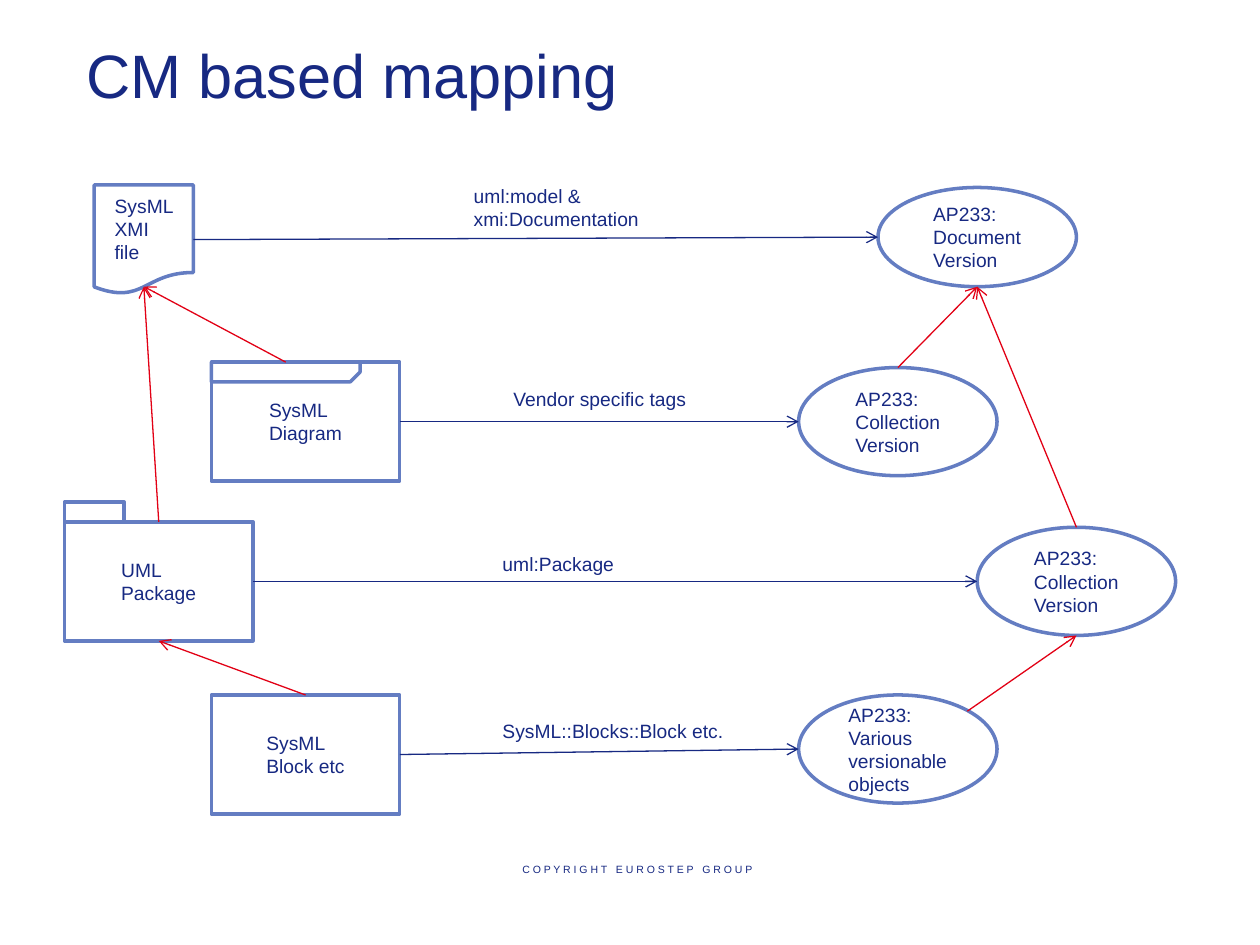
from dataclasses import dataclass

from lxml.etree import SubElement
from pptx import Presentation
from pptx.dml.color import RGBColor
from pptx.enum.shapes import MSO_CONNECTOR, MSO_SHAPE
from pptx.enum.text import MSO_ANCHOR
from pptx.oxml.ns import qn
from pptx.util import Cm, Pt


@dataclass(frozen=True)
class Theme:
    font: str = "Arial"
    ink: RGBColor = RGBColor(0x17, 0x29, 0x82)
    outline: RGBColor = RGBColor(0x64, 0x7D, 0xC2)
    containment: RGBColor = RGBColor(0xE2, 0x00, 0x15)
    paper: RGBColor = RGBColor(0xFF, 0xFF, 0xFF)
    title_size: float = 35
    body_size: float = 11
    footer_size: float = 6
    outline_width: float = 2
    arrow_width: float = 0.75


THEME = Theme()

TITLE = ("CM based mapping", (1.49, 0.46, 22.43, 2.06))
FOOTER = (" ".join("COPYRIGHT EUROSTEP GROUP"), (10.28, 17.27, 5.6, 0.51))

BOX = (3.8, 2.4)
OVAL = (4.0, 2.18)
TAB_HEIGHT = 0.4

# name: (preset, left, top, (width, height), paragraphs)
NODES = {
    "file": (MSO_SHAPE.FLOWCHART_DOCUMENT, 1.9, 3.73, (2.0, 2.2), ["SysML XMI", "file"]),
    "diagram": (MSO_SHAPE.RECTANGLE, 4.26, 7.3, BOX, ["SysML", "Diagram"]),
    "package": (MSO_SHAPE.RECTANGLE, 1.3, 10.52, BOX, ["UML", "Package"]),
    "block": (MSO_SHAPE.RECTANGLE, 4.26, 14.01, BOX, ["SysML", "Block etc"]),
    "document": (MSO_SHAPE.OVAL, 17.7, 3.78, (4.0, 2.0), ["AP233:", "Document Version"]),
    "diagram collection": (MSO_SHAPE.OVAL, 16.1, 7.41, OVAL, ["AP233:", "Collection Version"]),
    "package collection": (MSO_SHAPE.OVAL, 19.7, 10.63, OVAL, ["AP233:", "Collection Version"]),
    "objects": (MSO_SHAPE.OVAL, 16.1, 14.01, OVAL, ["AP233:", "Various versionable", "objects"]),
}

# owner: (preset, width, offset from the owner's top)
TABS = {
    "diagram": (MSO_SHAPE.SNIP_1_RECTANGLE, 3.0, 0),
    "package": (MSO_SHAPE.RECTANGLE, 1.2, -TAB_HEIGHT),
}

MAPPINGS = [
    ("file", "document"),
    ("diagram", "diagram collection"),
    ("package", "package collection"),
    ("block", "objects"),
]
CONTAINMENTS = [
    ("diagram tab", "top", "file", "wave"),
    ("package", "top", "file", "wave"),
    ("block", "top", "package", "bottom"),
    ("diagram collection", "top", "document", "bottom"),
    ("package collection", "top", "document", "bottom"),
    ("objects", "top right", "package collection", "bottom"),
]
LABELS = [
    ("uml:model & xmi:Documentation", (9.3, 3.59, 4.0, 1.19)),
    ("Vendor specific tags", (10.1, 7.68, 4.4, 0.74)),
    ("uml:Package", (9.88, 11.0, 4.4, 0.74)),
    ("SysML::Blocks::Block etc.", (9.88, 14.38, 5.03, 0.74)),
]

# Points on a shape, as shares of its width and height
SIDES = {
    "top": (0.5, 0),
    "left": (0, 0.5),
    "bottom": (0.5, 1),
    "right": (1, 0.5),
    "wave": (0.5, 0.93),
    "top right": (0.85, 0.15),
}
RECTANGLE_SITES = {"top": 0, "left": 1, "bottom": 2, "right": 3}


def write(text_frame, paragraphs, size):
    for index, text in enumerate(paragraphs):
        paragraph = text_frame.paragraphs[0] if index == 0 else text_frame.add_paragraph()
        paragraph.text = text
        paragraph.font.name = THEME.font
        paragraph.font.size = Pt(size)
        paragraph.font.color.rgb = THEME.ink


def add_text(slide, text, area, size):
    text_frame = slide.shapes.add_textbox(*map(Cm, area)).text_frame
    text_frame.word_wrap = True
    write(text_frame, [text], size)
    return text_frame


def add_outlined(shapes, preset, left, top, size):
    shape = shapes.add_shape(preset, Cm(left), Cm(top), *map(Cm, size))
    shape.shadow.inherit = False
    shape.fill.solid()
    shape.fill.fore_color.rgb = THEME.paper
    shape.line.color.rgb = THEME.outline
    shape.line.width = Pt(THEME.outline_width)
    return shape


def add_node(shapes, preset, left, top, size, paragraphs):
    """Outlined shape whose left-aligned text is centred as a block."""
    shape = add_outlined(shapes, preset, left, top, size)
    text_frame = shape.text_frame
    text_frame.word_wrap = True
    text_frame.vertical_anchor = MSO_ANCHOR.MIDDLE
    shape._element.txBody.find(qn("a:bodyPr")).set("anchorCtr", "1")
    write(text_frame, paragraphs, THEME.body_size)
    for paragraph in text_frame.paragraphs:
        paragraph.alignment = None
    return shape


def add_tab(shapes, owner):
    preset, width, offset = TABS[owner]
    _, left, top, _, _ = NODES[owner]
    tab = add_outlined(shapes, preset, left, top + offset, (width, TAB_HEIGHT))
    if preset == MSO_SHAPE.SNIP_1_RECTANGLE:
        tab.adjustments[0] = 0.5
        tab._element.spPr.find(qn("a:xfrm")).set("flipV", "1")
    return tab


def point(shape, side):
    across, down = SIDES[side]
    return int(shape.left + across * shape.width), int(shape.top + down * shape.height)


def add_arrow(slide, start, start_side, end, end_side, color):
    connector = slide.shapes.add_connector(
        MSO_CONNECTOR.STRAIGHT, *point(start, start_side), *point(end, end_side))
    for shape, side, join in ((start, start_side, connector.begin_connect),
                              (end, end_side, connector.end_connect)):
        if shape.auto_shape_type == MSO_SHAPE.RECTANGLE:
            join(shape, RECTANGLE_SITES[side])
    connector.line.color.rgb = color
    connector.line.width = Pt(THEME.arrow_width)
    SubElement(connector.line._get_or_add_ln(), qn("a:tailEnd"), type="arrow")
    SubElement(connector._element.spPr, qn("a:effectLst"))


def main():
    presentation = Presentation()
    presentation.slide_width, presentation.slide_height = Cm(25.4), Cm(19.05)
    slide = presentation.slides.add_slide(presentation.slide_layouts[6])

    add_text(slide, *FOOTER, THEME.footer_size)
    title = add_text(slide, *TITLE, THEME.title_size)
    title.vertical_anchor = MSO_ANCHOR.MIDDLE

    drawn = {}
    for name, node in NODES.items():
        shapes = slide.shapes.add_group_shape().shapes if name in TABS else slide.shapes
        drawn[name] = add_node(shapes, *node)
        if name in TABS:
            drawn[f"{name} tab"] = add_tab(shapes, name)

    for source, target in MAPPINGS:
        add_arrow(slide, drawn[source], "right", drawn[target], "left", THEME.ink)
    for part, part_side, whole, whole_side in CONTAINMENTS:
        add_arrow(slide, drawn[part], part_side, drawn[whole], whole_side, THEME.containment)
    for text, area in LABELS:
        add_text(slide, text, area, THEME.body_size)

    presentation.save("out.pptx")


if __name__ == "__main__":
    main()
